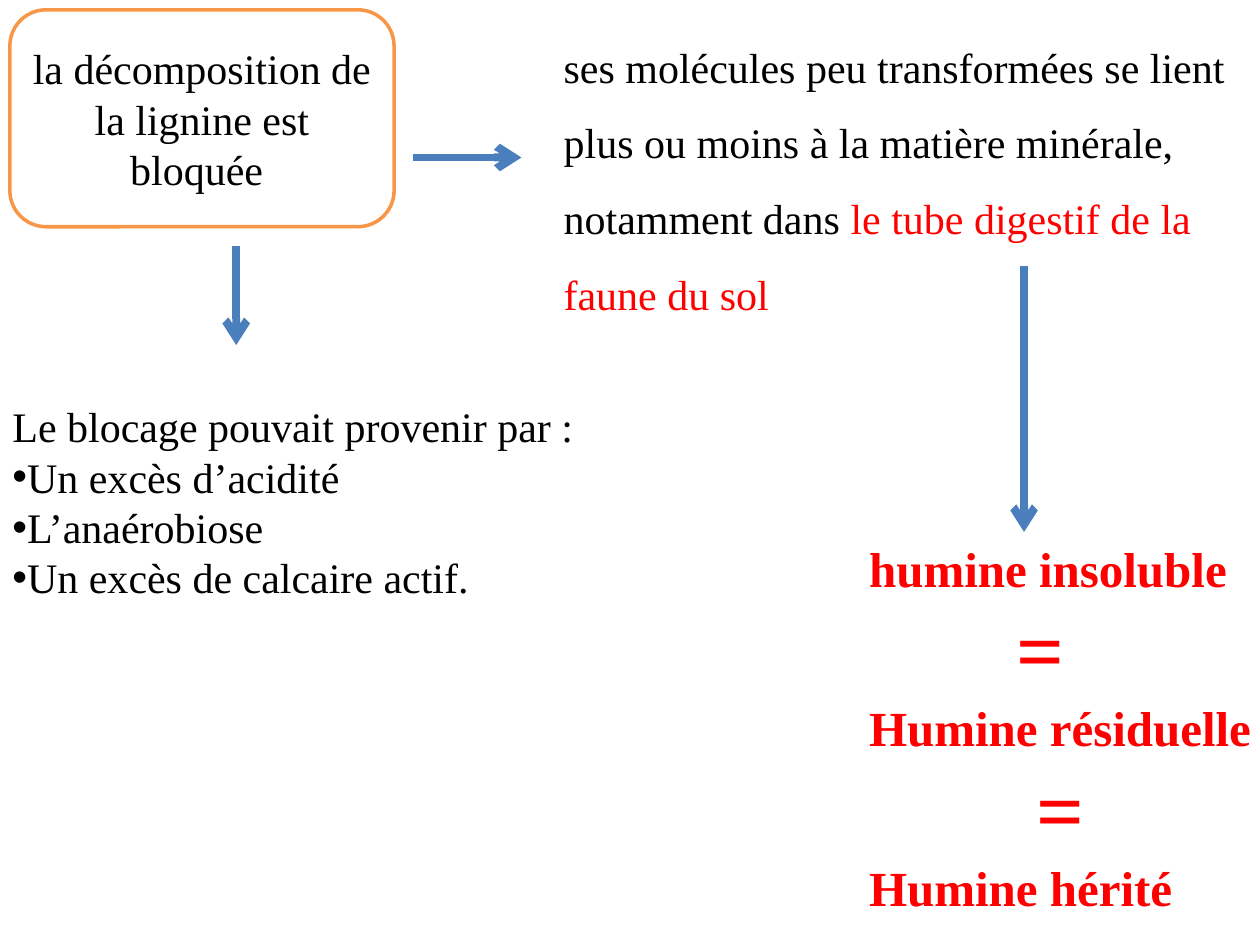
import pptx
import pptx.dml.color
import pptx.enum.shapes
import pptx.enum.text
import pptx.oxml
import pptx.oxml.ns
import pptx.util
from lxml import etree

Pt = pptx.util.Pt
Align = pptx.enum.text.PP_ALIGN
Anchor = pptx.enum.text.MSO_ANCHOR
Auto = pptx.enum.text.MSO_AUTO_SIZE
Shape = pptx.enum.shapes.MSO_SHAPE
Link = pptx.enum.shapes.MSO_CONNECTOR

BLACK, RED, WHITE = "000000", "FF0000", "FFFFFF"
BLUE, ORANGE = "4B7EBC", "F79646"


def color(code):
    return pptx.dml.color.RGBColor.from_string(code)


def node(parent, tag, **attrs):
    return etree.SubElement(parent, pptx.oxml.ns.qn(tag), attrs)


class Page:
    """Holds the slide and its common text style."""

    def __init__(self, slide):
        self.slide = slide
        self.font = {"name": "Times New Roman", "size": Pt(24)}

    def fill(self, frame, paras, **form):
        """Fill a frame; each paragraph is (runs, format), each run (text, color, font)."""
        for key, value in form.items():
            setattr(frame, key, value)
        for i, (runs, style) in enumerate(paras):
            para = frame.paragraphs[0] if i == 0 else frame.add_paragraph()
            style = dict(style)
            indent = style.pop("indent", None)
            bullet = style.pop("bullet", None)
            for key, value in style.items():
                setattr(para, key, value)
            props = para._p.get_or_add_pPr()
            if indent:
                props.set("marL", str(Pt(indent)))
            if bullet:
                node(props, "a:buFont", typeface="Arial")
                node(props, "a:buChar", char=bullet)
            for text, code, font in runs:
                run = para.add_run()
                run.text = text
                run.font.color.rgb = color(code)
                for key, value in {**self.font, **font}.items():
                    setattr(run.font, key, value)

    def text(self, box, paras, **form):
        area = self.slide.shapes.add_textbox(*map(Pt, box))
        base = {"word_wrap": True, "auto_size": Auto.SHAPE_TO_FIT_TEXT}
        self.fill(area.text_frame, paras, **{**base, **form})

    def card(self, box, paras):
        card = self.slide.shapes.add_shape(Shape.ROUNDED_RECTANGLE, *map(Pt, box))
        card.shadow.inherit = False
        card.fill.solid()
        card.fill.fore_color.rgb = color(WHITE)
        card.line.color.rgb = color(ORANGE)
        card.line.width = Pt(2)
        self.fill(card.text_frame, paras, vertical_anchor=Anchor.MIDDLE)

    def arrow(self, *ends):
        link = self.slide.shapes.add_connector(Link.STRAIGHT, *map(Pt, ends))
        link.line.color.rgb = color(BLUE)
        link.line.width = Pt(4.5)
        node(link.line._get_or_add_ln(), "a:tailEnd", type="arrow")
        node(link._element.spPr, "a:effectLst")


def main():
    deck = pptx.Presentation()
    deck.slide_width, deck.slide_height = Pt(720), Pt(540)
    page = Page(deck.slides.add_slide(deck.slide_layouts[6]))

    causes = ["Un excès d’acidité", "L’anaérobiose", "Un excès de calcaire actif."]
    intro = [([("Le blocage pouvait provenir par :", BLACK, {})], {})]
    items = [([(cause, BLACK, {})], {"bullet": "•"}) for cause in causes]
    page.text((0, 224.6, 394, 124), intro + items, vertical_anchor=Anchor.MIDDLE)

    page.card((5.6, 5.6, 219.6, 124), [
        ([("la décomposition de la lignine est bloquée ", BLACK, {})],
         {"alignment": Align.CENTER})])

    page.text((315, 5.6, 405, 181.4), [
        ([("ses molécules peu transformées se lient plus ou moins à la matière "
           "minérale, notamment dans ", BLACK, {}),
          ("le tube digestif de la faune du sol", RED, {})],
         {"line_spacing": 1.5})])

    name = {"size": Pt(28), "bold": True}
    sign = {"size": Pt(48), "bold": True}
    page.text((489.6, 304, 234.7, 259), [
        ([("humine insoluble", RED, name)], {}),
        ([("=", RED, sign)], {"indent": 84}),
        ([("Humine résiduelle", RED, name)], {}),
        ([("=", RED, sign)], {"alignment": Align.CENTER}),
        ([("Humine hérité", RED, name)], {})], word_wrap=False)

    page.arrow(135, 140.4, 135, 197.2)
    page.arrow(236.2, 90, 298, 90)
    page.arrow(585.2, 152, 585.2, 304)

    deck.save("out.pptx")


if __name__ == "__main__":
    main()
